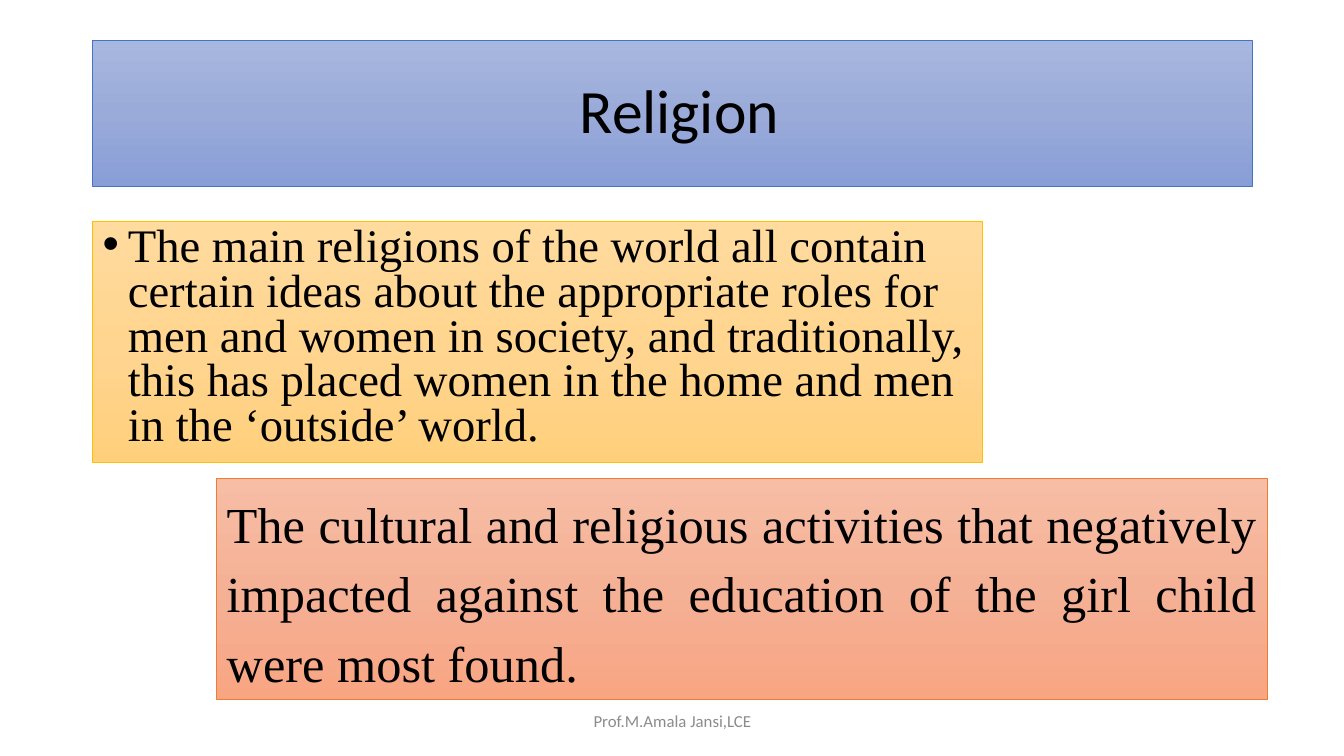
from dataclasses import dataclass

from lxml import etree
from pptx import Presentation
from pptx.dml.color import RGBColor
from pptx.enum.shapes import MSO_SHAPE
from pptx.enum.text import MSO_ANCHOR, MSO_AUTO_SIZE, PP_ALIGN
from pptx.oxml.ns import qn
from pptx.util import Inches, Pt

RECTANGLE = MSO_SHAPE.RECTANGLE
TOP, MIDDLE = MSO_ANCHOR.TOP, MSO_ANCHOR.MIDDLE
LEFT, CENTER, JUSTIFY = PP_ALIGN.LEFT, PP_ALIGN.CENTER, PP_ALIGN.JUSTIFY
GROW = MSO_AUTO_SIZE.SHAPE_TO_FIT_TEXT
BLANK_LAYOUT = 6


@dataclass(frozen=True)
class Theme:
    sans: str = "Calibri"
    serif: str = "Times New Roman"
    text: str = "000000"
    footer_text: str = "8C8C8C"
    blue: tuple = ("A8B7DF", "9AABD9", "889ED7")
    blue_line: str = "4472C4"
    gold: tuple = ("FFDB9E", "FFD590", "FFD07C")
    gold_line: str = "FFC000"
    orange: tuple = ("F7BDA5", "F5B196", "F8A582")
    orange_line: str = "ED7D31"
    title_size: float = 44
    bullet_size: float = 33.3
    finding_size: float = 36
    footer_size: float = 12
    border: float = 0.5


THEME = Theme()


def fill_gradient(shape, colors):
    """Fill from top to bottom with evenly spaced colour stops."""
    shape.fill.gradient()
    shape.fill.gradient_angle = 270
    stops = shape.element.spPr.find(qn("a:gradFill")).find(qn("a:gsLst"))
    for stop in list(stops):
        stops.remove(stop)
    for index, color in enumerate(colors):
        position = 100000 * index // (len(colors) - 1)
        stop = etree.SubElement(stops, qn("a:gs"), pos=str(position))
        etree.SubElement(stop, qn("a:srgbClr"), val=color)


def add_panel(slide, box, colors, line_color):
    panel = slide.shapes.add_shape(RECTANGLE, *map(Inches, box))
    panel.shadow.inherit = False
    fill_gradient(panel, colors)
    panel.line.color.rgb = RGBColor.from_string(line_color)
    panel.line.width = Pt(THEME.border)
    return panel


def write_text(shape, text, font_name, size, color, align, anchor):
    frame = shape.text_frame
    frame.word_wrap = True
    frame.vertical_anchor = anchor
    paragraph = frame.paragraphs[0]
    paragraph.alignment = align
    run = paragraph.add_run()
    run.text = text
    run.font.name = font_name
    run.font.size = Pt(size)
    run.font.color.rgb = RGBColor.from_string(color)
    return paragraph


def add_bullet(paragraph, indent):
    properties = paragraph._p.get_or_add_pPr()
    properties.set("marL", str(Inches(indent)))
    properties.set("indent", str(-Inches(indent)))
    etree.SubElement(properties, qn("a:buFont"), typeface="Arial")
    etree.SubElement(properties, qn("a:buChar"), char="•")


def add_title(slide, box, text):
    panel = add_panel(slide, box, THEME.blue, THEME.blue_line)
    paragraph = write_text(panel, text, THEME.sans, THEME.title_size,
                           THEME.text, CENTER, MIDDLE)
    paragraph.line_spacing = 0.9


def add_bullet_panel(slide, box, text):
    panel = add_panel(slide, box, THEME.gold, THEME.gold_line)
    paragraph = write_text(panel, text, THEME.serif, THEME.bullet_size,
                           THEME.text, LEFT, TOP)
    paragraph.line_spacing = 0.8
    add_bullet(paragraph, 0.25)


def add_finding_panel(slide, box, text):
    panel = add_panel(slide, box, THEME.orange, THEME.orange_line)
    paragraph = write_text(panel, text, THEME.serif, THEME.finding_size,
                           THEME.text, JUSTIFY, TOP)
    paragraph.line_spacing = 1.15
    paragraph.space_after = Pt(10)
    panel.text_frame.auto_size = GROW


def add_footer(slide, box, text):
    footer = slide.shapes.add_textbox(*map(Inches, box))
    write_text(footer, text, THEME.sans, THEME.footer_size,
               THEME.footer_text, CENTER, MIDDLE)


def main():
    presentation = Presentation()
    presentation.slide_width = Inches(13.33)
    presentation.slide_height = Inches(7.5)
    slide = presentation.slides.add_slide(
        presentation.slide_layouts[BLANK_LAYOUT])
    add_title(slide, (0.92, 0.4, 11.5, 1.45), " Religion")
    add_bullet_panel(
        slide, (0.92, 2.2, 8.82, 2.39),
        "The main religions of the world all contain certain ideas about the "
        "appropriate roles for men and women in society, and traditionally, "
        "this has placed women in the home and men in the ‘outside’ world.")
    add_finding_panel(
        slide, (2.15, 4.75, 10.42, 2.19),
        "The cultural and religious activities that negatively impacted "
        "against the education of the girl child were most found.")
    add_footer(slide, (4.42, 6.95, 4.5, 0.4), "Prof.M.Amala Jansi,LCE")
    presentation.save("out.pptx")


if __name__ == "__main__":
    main()
